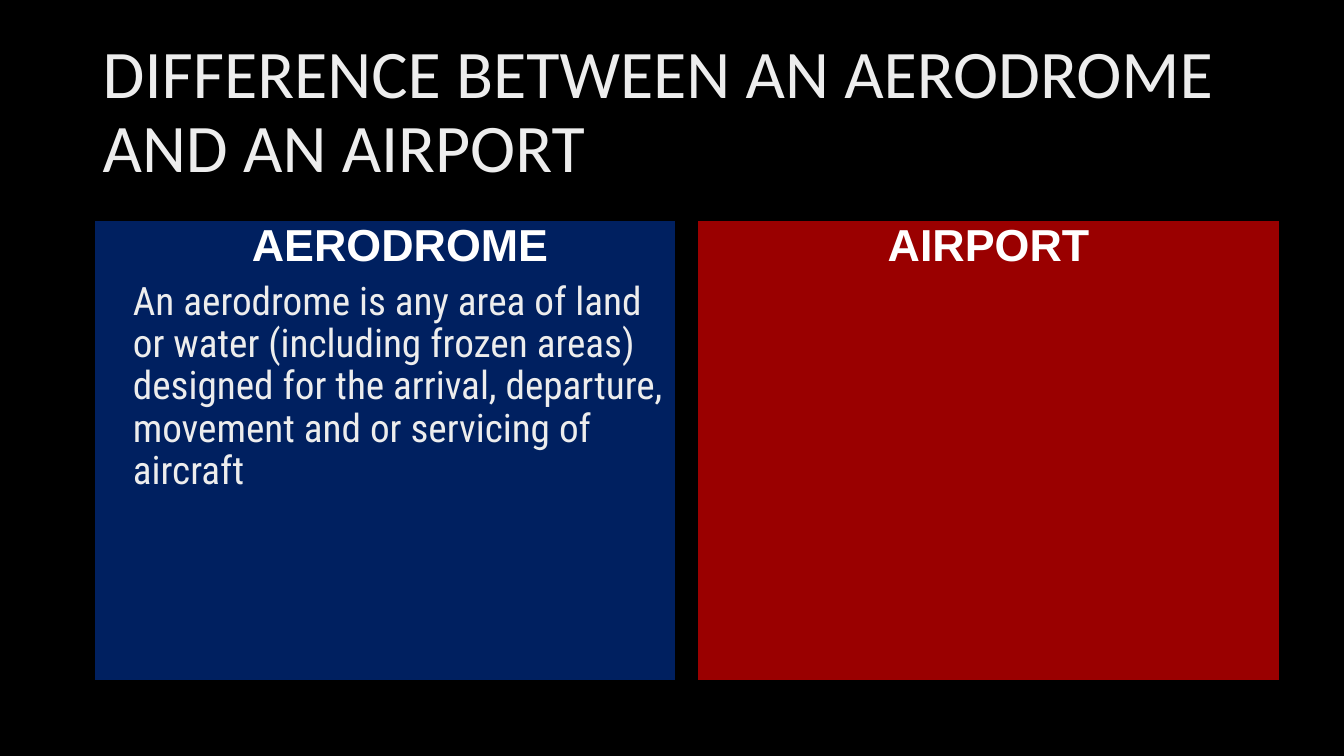
from pptx import Presentation
from pptx.dml.color import RGBColor
from pptx.enum.shapes import MSO_SHAPE as Shape
from pptx.enum.text import MSO_ANCHOR as Anchor, PP_ALIGN as Align
from pptx.util import Cm, Pt

TITLE = "DIFFERENCE BETWEEN AN AERODROME AND AN AIRPORT"
PANELS = [
    {"heading": "AERODROME", "fill": "002060", "indent": 0.76,
     "body": "An aerodrome is any area of land or water (including frozen areas) "
             "designed for the arrival, departure, movement and or servicing of aircraft"},
    {"heading": "AIRPORT", "fill": "9A0000", "indent": 0, "body": None},
]
THEME = {
    "background": "000000",
    "outline": "000000",
    "title": {"name": "Calibri", "size": Pt(48.6), "color": "EDEDED"},
    "heading": {"name": "Arial", "size": Pt(32), "bold": True, "color": "FFFFFF"},
    "body": {"name": "Roboto Condensed", "size": Pt(28), "color": "EDEDED"},
}
LEFT, PANEL_TOP, PANEL_W, PANEL_H, GAP = 2.34, 5.51, 14.73, 11.68, 0.48
HEADING_TOP, HEADING_H = 4.67, 2.29
BODY_TOP = HEADING_TOP + HEADING_H
BODY_H = PANEL_TOP + PANEL_H - BODY_TOP


def add_text(s, text, box, style, anchor, align=Align.LEFT):
    tf = s.shapes.add_textbox(*map(Cm, box)).text_frame
    tf.word_wrap = True
    tf.vertical_anchor = anchor
    p = tf.paragraphs[0]
    p.alignment, p.line_spacing = align, 0.9
    r = p.add_run()
    r.text = text
    for key, value in THEME[style].items():
        if key == "color":
            r.font.color.rgb = RGBColor.from_string(value)
        else:
            setattr(r.font, key, value)


def add_panel(s, panel, left):
    sp = s.shapes.add_shape(Shape.RECTANGLE, *map(Cm, (left, PANEL_TOP, PANEL_W, PANEL_H)))
    sp.shadow.inherit = False
    sp.fill.solid()
    sp.fill.fore_color.rgb = RGBColor.from_string(panel["fill"])
    sp.line.color.rgb = RGBColor.from_string(THEME["outline"])
    sp.line.width = Pt(3)
    x, w = left + panel["indent"], PANEL_W - panel["indent"]
    add_text(s, panel["heading"], (x, HEADING_TOP, w, HEADING_H), "heading",
             Anchor.BOTTOM, Align.CENTER)
    if panel["body"]:
        add_text(s, panel["body"], (x, BODY_TOP, w, BODY_H), "body", Anchor.TOP)


def main():
    prs = Presentation()
    prs.slide_width, prs.slide_height = Cm(33.87), Cm(19.05)
    s = prs.slides.add_slide(prs.slide_layouts[6])
    s.background.fill.solid()
    s.background.fill.fore_color.rgb = RGBColor.from_string(THEME["background"])
    add_text(s, TITLE, (LEFT, 1.02, 29.21, 3.68), "title", Anchor.MIDDLE)
    for i, panel in enumerate(PANELS):
        add_panel(s, panel, LEFT + i * (PANEL_W + GAP))
    prs.save("out.pptx")


if __name__ == "__main__":
    main()
